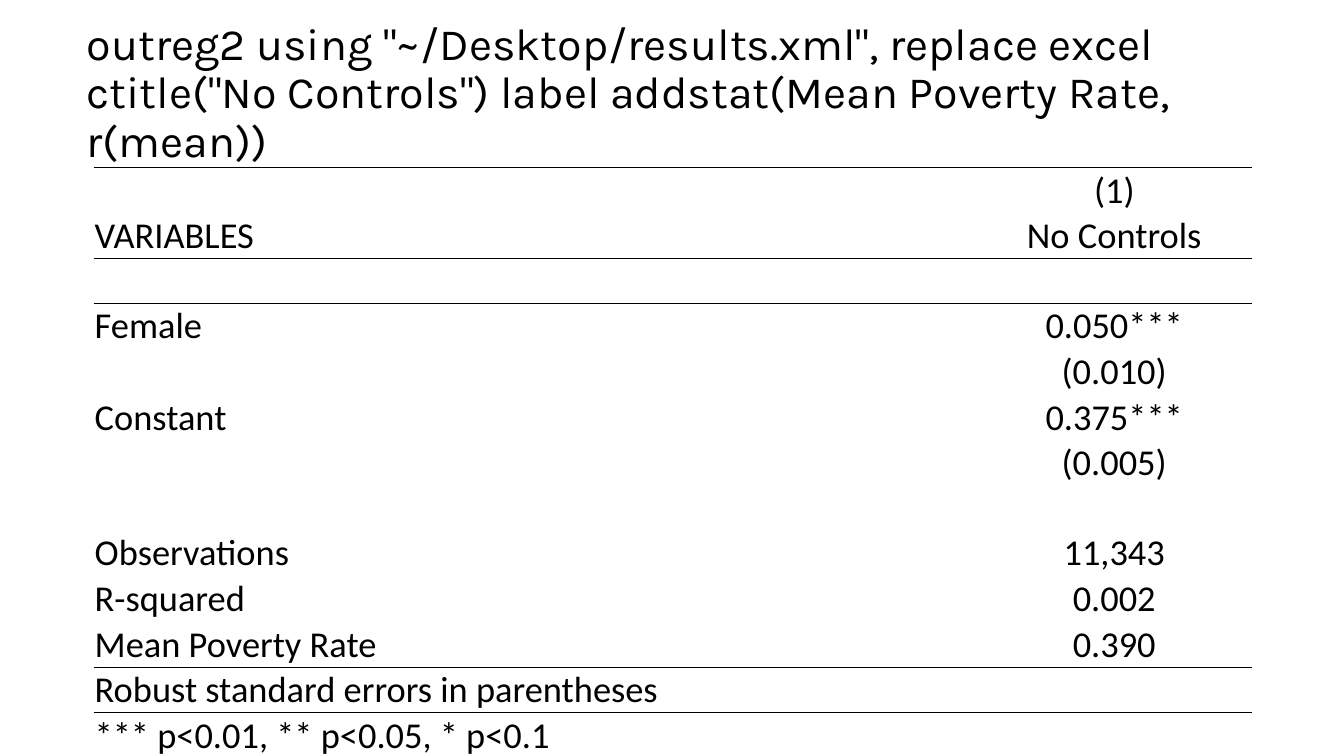
from pptx import Presentation, util as u
from pptx.dml.color import RGBColor
from pptx.enum import text
from pptx.oxml import parse_xml
from pptx.oxml.ns import nsdecls, qn

HEAD = ('outreg2 using "~/Desktop/results.xml", replace excel '
        'ctitle("No Controls") label addstat(Mean Poverty Rate, r(mean))')
ROWS = [
    ("", "(1)"),
    ("VARIABLES", "No Controls"),
    ("", ""),
    ("Female", "0.050***"),
    ("", "(0.010)"),
    ("Constant", "0.375***"),
    ("", "(0.005)"),
    ("", ""),
    ("Observations", "11,343"),
    ("R-squared", "0.002"),
    ("Mean Poverty Rate", "0.390"),
    ("Robust standard errors in parentheses", ""),
    ("*** p<0.01, ** p<0.05, * p<0.1", ""),
]
RULES = {0: "T", 1: "B", 2: "T", 10: "B", 11: "T"}
WIDTHS = (630.72, 196.56)
ALIGNS = (text.PP_ALIGN.LEFT, text.PP_ALIGN.CENTER)
PITCH = 32
THEME = {
    "ink": "000000",
    "rule": 0.5,
    "title": {"name": "Karla", "size": u.Pt(32)},
    "body": {"name": "Calibri", "size": u.Pt(26)},
    "plain": "{2D5ABB26-0587-4C30-8999-92F81FD0307C}",
}
TITLE = {"left": u.Pt(54.72), "top": u.Pt(14.4),
         "width": u.Pt(839.52), "height": u.Pt(105.84)}
CELL = {"margin_left": u.Pt(0.72), "margin_right": u.Pt(0.72),
        "margin_top": u.Pt(0.72), "margin_bottom": u.Pt(0),
        "vertical_anchor": text.MSO_ANCHOR.BOTTOM}


def apply(item, values):
    for key, value in values.items():
        setattr(item, key, value)


def write(para, words, look, align):
    para.alignment = align
    if words:
        run = para.add_run()
        run.text = words
        apply(run.font, THEME[look])
        run.font.color.rgb = RGBColor.from_string(THEME["ink"])


def rule(cell, side):
    line = parse_xml(
        f'<a:ln{side} {nsdecls("a")} w="{u.Pt(THEME["rule"])}">'
        f'<a:solidFill><a:srgbClr val="{THEME["ink"]}"/></a:solidFill>'
        f'</a:ln{side}>')
    cell._tc.get_or_add_tcPr().insert(0, line)


def add_title(slide):
    title = slide.shapes.title
    apply(title, TITLE)
    frame = title.text_frame
    apply(frame, {"word_wrap": True, "auto_size": text.MSO_AUTO_SIZE.NONE,
                  "vertical_anchor": text.MSO_ANCHOR.MIDDLE})
    para = frame.paragraphs[0]
    para.line_spacing = 0.9
    write(para, HEAD, "title", text.PP_ALIGN.LEFT)


def add_results(slide):
    table = slide.shapes.add_table(
        len(ROWS), len(WIDTHS), u.Pt(66.96), u.Pt(119.52),
        u.Pt(sum(WIDTHS)), u.Pt(PITCH * len(ROWS))).table
    apply(table, {"first_row": False, "horz_banding": False})
    table._tbl.tblPr.find(qn("a:tableStyleId")).text = THEME["plain"]
    for col, width in zip(table.columns, WIDTHS):
        col.width = u.Pt(width)
    for r, row in enumerate(ROWS):
        table.rows[r].height = u.Pt(PITCH)
        for c, words in enumerate(row):
            cell = table.cell(r, c)
            apply(cell, CELL)
            cell.fill.background()
            write(cell.text_frame.paragraphs[0], words, "body", ALIGNS[c])
            if r in RULES:
                rule(cell, RULES[r])


def main():
    deck = Presentation()
    apply(deck, {"slide_width": u.Pt(960), "slide_height": u.Pt(540)})
    slide = deck.slides.add_slide(deck.slide_layouts[5])
    add_title(slide)
    add_results(slide)
    deck.save("out.pptx")


if __name__ == "__main__":
    main()
